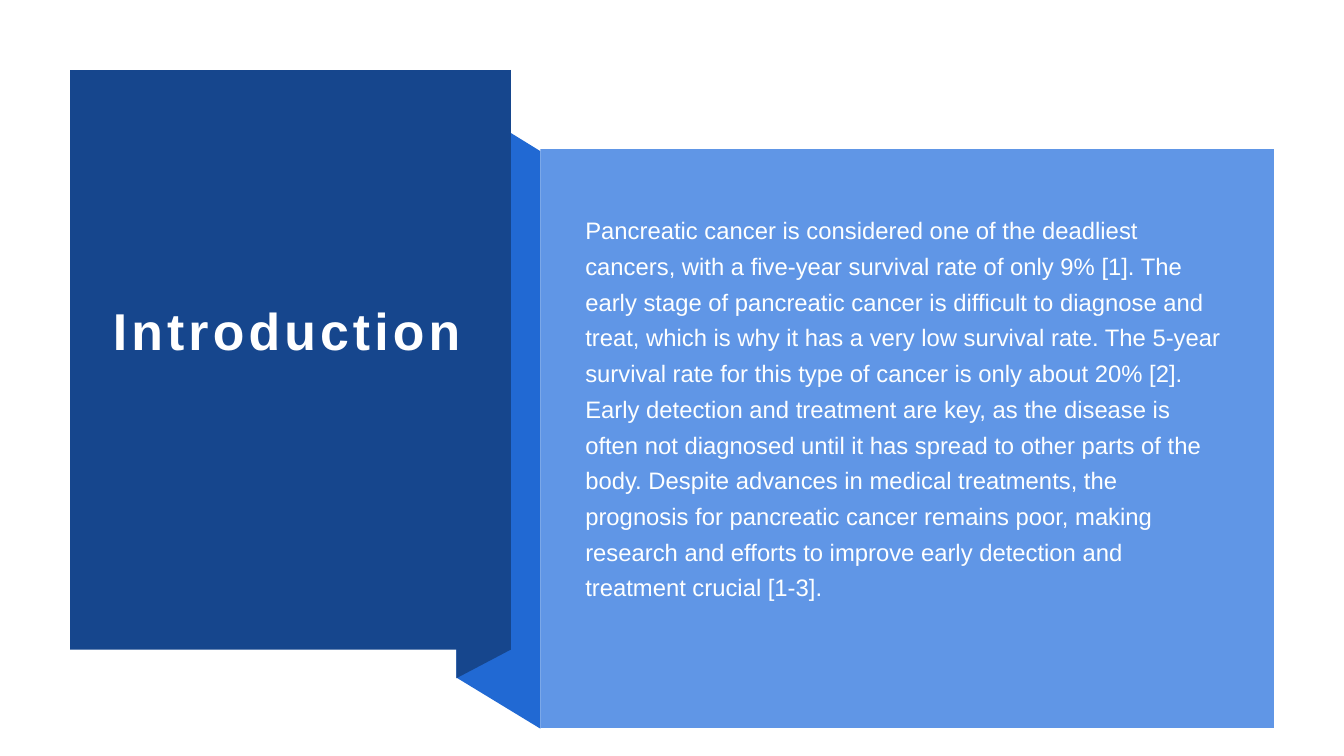
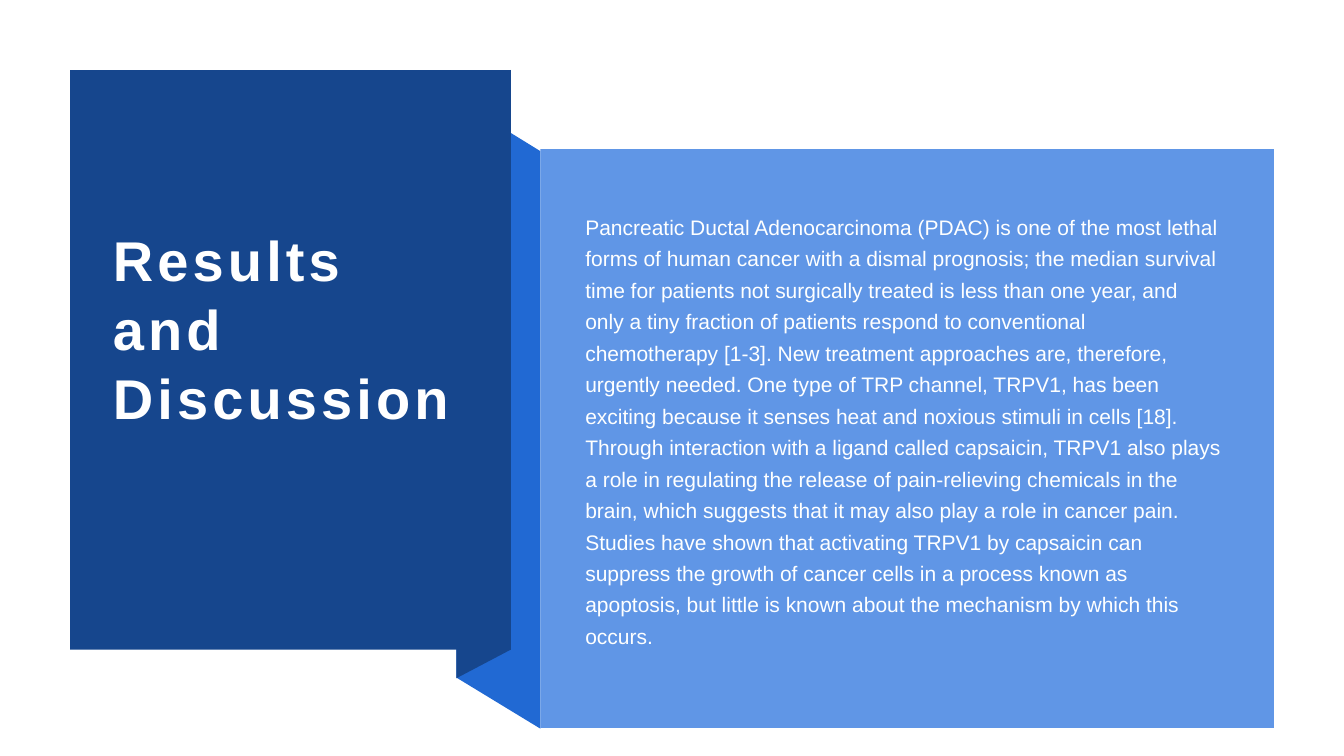
from pptx import Presentation
from pptx.dml.color import RGBColor
from pptx.enum.shapes import MSO_SHAPE as Preset
from pptx.enum.text import MSO_ANCHOR as Anchor
from pptx.util import Pt

COLORS = {
    "banner": "16468D",
    "ribbon": "2169D3",
    "panel": "6096E6",
    "title": "FFFFFF",
    "body": "FEFFFF",
}

RIBBON_OUTLINE = [(386, 520.5), (326, 484), (326, 71), (386, 108)]
FLAP_OUTLINE = [(365, 464), (326, 484.5), (326, 70.5), (365, 50)]
BANNER_BOX = (50, 50, 315, 414)
PANEL_BOX = (386, 106.5, 524, 413.5)

TITLE_FORMAT = {"bold": True, "name": "Arial"}
TITLE_PARAGRAPH = {"line_spacing": 1.03}
BODY_FORMAT = {"name": "Arial"}
BODY_PARAGRAPH = {"line_spacing": 1.25, "space_after": Pt(10)}
FRAME_FORMAT = {
    "word_wrap": True,
    "vertical_anchor": Anchor.MIDDLE,
    "margin_left": Pt(7.2),
    "margin_right": Pt(7.2),
    "margin_top": Pt(3.6),
    "margin_bottom": Pt(3.6),
}

SECTIONS = [
    {
        "title": "Introduction",
        "title_size": 37,
        "title_height": 316,
        "sentences": [
            "Pancreatic cancer is considered one of the deadliest cancers, with a "
            "five-year survival rate of only 9% [1].",
            "The early stage of pancreatic cancer is difficult to diagnose and treat, "
            "which is why it has a very low survival rate.",
            "The 5-year survival rate for this type of cancer is only about 20% [2].",
            "Early detection and treatment are key, as the disease is often not "
            "diagnosed until it has spread to other parts of the body.",
            "Despite advances in medical treatments, the prognosis for pancreatic "
            "cancer remains poor, making research and efforts to improve early "
            "detection and treatment crucial [1-3].",
        ],
        "body_size": 17,
        "body_height": 308,
    },
    {
        "title": "Results and Discussion",
        "title_size": 40,
        "title_height": 313,
        "sentences": [
            "Pancreatic Ductal Adenocarcinoma (PDAC) is one of the most lethal forms "
            "of human cancer with a dismal prognosis; the median survival time for "
            "patients not surgically treated is less than one year, and only a tiny "
            "fraction of patients respond to conventional chemotherapy [1-3].",
            "New treatment approaches are, therefore, urgently needed.",
            "One type of TRP channel, TRPV1, has been exciting because it senses heat "
            "and noxious stimuli in cells [18].",
            "Through interaction with a ligand called capsaicin, TRPV1 also plays a "
            "role in regulating the release of pain-relieving chemicals in the brain, "
            "which suggests that it may also play a role in cancer pain.",
            "Studies have shown that activating TRPV1 by capsaicin can suppress the "
            "growth of cancer cells in a process known as apoptosis, but little is "
            "known about the mechanism by which this occurs.",
        ],
        "body_size": 15,
        "body_height": 341,
    },
]


def apply_format(target, values):
    for name, value in values.items():
        setattr(target, name, value)


def paint(surface, color):
    surface.shadow.inherit = False
    surface.fill.solid()
    surface.fill.fore_color.rgb = RGBColor.from_string(COLORS[color])
    surface.line.fill.background()


def add_fold(slide, outline, color):
    corners = [(Pt(x), Pt(y)) for x, y in outline]
    builder = slide.shapes.build_freeform(*corners[0], scale=1.0)
    builder.add_line_segments(corners[1:], close=True)
    paint(builder.convert_to_shape(), color)


def add_block(slide, box, color):
    paint(slide.shapes.add_shape(Preset.RECTANGLE, *map(Pt, box)), color)


def add_text(slide, box, text, size, color, font_format, paragraph_format):
    frame = slide.shapes.add_textbox(*map(Pt, box)).text_frame
    apply_format(frame, FRAME_FORMAT)
    paragraph = frame.paragraphs[0]
    apply_format(paragraph, paragraph_format)
    run = paragraph.add_run()
    run.text = text
    apply_format(run.font, {**font_format, "size": Pt(size)})
    run.font.color.rgb = RGBColor.from_string(COLORS[color])
    return run


def add_title(slide, section):
    box = (73.5, 77, 267, section["title_height"])
    title = add_text(slide, box, section["title"], section["title_size"],
                     "title", TITLE_FORMAT, TITLE_PARAGRAPH)
    title.font._element.set("spc", "300")


def add_body(slide, section):
    box = (411, 135.5, 469, section["body_height"])
    add_text(slide, box, " ".join(section["sentences"]), section["body_size"],
             "body", BODY_FORMAT, BODY_PARAGRAPH)


def add_section(deck, section):
    slide = deck.slides.add_slide(deck.slide_layouts[6])
    add_fold(slide, RIBBON_OUTLINE, "ribbon")
    add_fold(slide, FLAP_OUTLINE, "banner")
    add_block(slide, BANNER_BOX, "banner")
    add_title(slide, section)
    add_block(slide, PANEL_BOX, "panel")
    add_body(slide, section)


def main():
    deck = Presentation()
    apply_format(deck, {"slide_width": Pt(960), "slide_height": Pt(540)})
    for section in SECTIONS:
        add_section(deck, section)
    deck.save("out.pptx")


if __name__ == "__main__":
    main()
